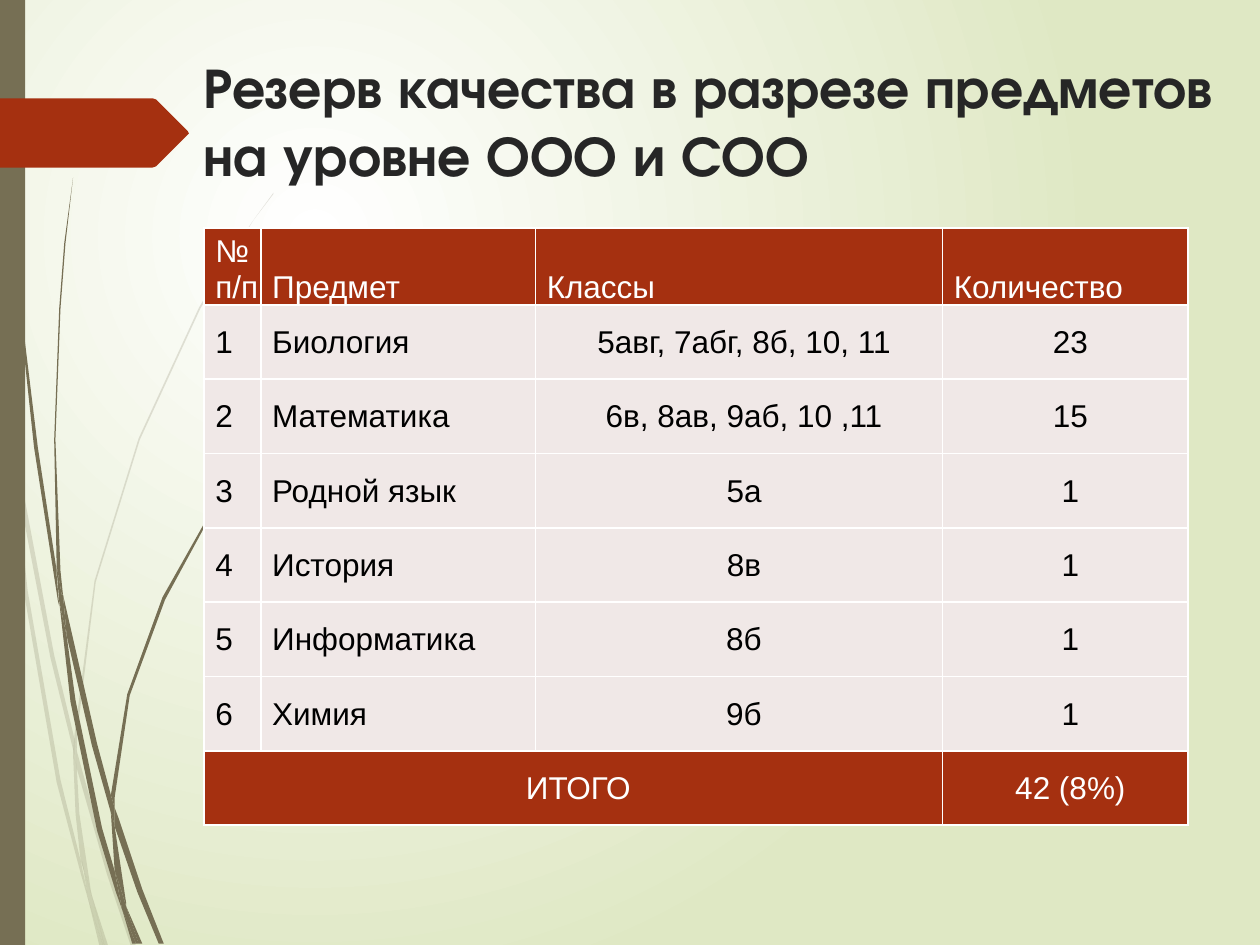
from lxml import etree
from pptx import Presentation
from pptx.dml.color import RGBColor
from pptx.enum.shapes import MSO_SHAPE
from pptx.enum.text import MSO_ANCHOR, PP_ALIGN
from pptx.oxml.ns import qn
from pptx.util import Pt

PX = 9144  # EMU in one px, 100 px to the inch
WHITE = RGBColor(0xFF, 0xFF, 0xFF)
BLACK = RGBColor(0x00, 0x00, 0x00)
INK = RGBColor(0x26, 0x26, 0x26)
OLIVE = RGBColor(0x76, 0x6F, 0x54)
RUST = RGBColor(0xA5, 0x30, 0x10)
ROSE = RGBColor(0xF0, 0xE8, 0xE7)
LIME = RGBColor(0xDF, 0xE8, 0xC4)

PALE = [
    [(8, 350), (6, 322), (0, 282), (0, 299), (7, 344)],
    [(40, 522), (59, 599), (59, 586), (43, 520), (10, 345), (12, 376)],
    [(64, 607), (61, 596), (61, 610), (85, 694), (104, 751), (108, 751), (88, 692)],
    [(83, 751), (86, 751), (73, 711)],
    [(64, 683), (48, 619), (22, 469), (12, 376), (8, 350), (19, 470), (45, 621),
     (64, 693), (70, 714), (69, 707)],
    [(58, 599), (60, 646), (64, 683), (67, 692), (73, 711), (72, 706), (63, 646),
     (61, 610), (61, 608)],
    [(61, 584), (76, 462), (111, 349), (159, 245), (187, 198), (201, 175), (217, 154),
     (217, 153), (201, 175), (186, 197), (158, 244), (110, 348), (75, 461), (59, 584),
     (59, 586), (61, 596)],
    [(70, 714), (79, 751), (82, 751)],
    [(61, 608), (61, 610), (61, 596), (59, 586), (58, 599)],
    [(67, 692), (65, 683), (69, 707), (70, 714), (82, 751), (83, 751), (73, 711)],
]
DARK = [
    [(5, 110), (14, 233), (27, 355), (46, 477), (47, 481), (45, 457), (45, 453),
     (30, 355), (15, 232), (6, 109), (4, 48), (3, 0), (2, 0), (3, 48)],
    [(73, 592), (88, 645), (88, 633), (88, 631), (77, 590), (50, 472), (53, 505)],
    [(94, 649), (91, 641), (91, 656), (109, 708), (126, 749), (130, 749), (113, 706)],
    [(91, 691), (81, 657), (60, 556), (53, 505), (47, 477), (56, 557), (77, 659),
     (92, 708), (97, 722), (96, 717)],
    [(50, 472), (48, 453), (44, 349), (48, 245), (52, 193), (58, 141), (51, 193),
     (47, 245), (43, 349), (45, 449), (49, 472)],
    [(110, 749), (113, 749), (100, 719)],
    [(47, 477), (53, 505), (50, 472), (49, 472), (45, 449), (45, 453)],
    [(91, 633), (103, 552), (131, 476), (169, 406), (191, 374), (203, 359), (216, 344),
     (215, 344), (203, 358), (191, 373), (168, 405), (129, 474), (101, 551), (88, 631),
     (91, 641)],
    [(97, 722), (105, 749), (108, 749)],
    [(88, 645), (91, 691), (96, 706), (100, 719), (100, 716), (91, 656), (90, 651)],
    [(88, 645), (90, 651), (91, 656), (91, 641), (88, 631), (88, 633)],
    [(96, 706), (91, 691), (96, 717), (97, 722), (108, 749), (110, 749), (100, 719)],
]
ARROW = [(149, 107), (124, 132), (121, 133), (0, 133), (0, 78), (121, 78), (124, 79),
         (149, 104), (150, 106)]

TITLE = "Резерв качества в разрезе предметов на уровне ООО и СОО"
ROWS = [
    ("№ п/п", "Предмет", "Классы", "Количество"),
    ("1", "Биология", "5авг, 7абг, 8б, 10, 11", "23"),
    ("2", "Математика", "6в, 8ав, 9аб, 10 ,11", "15"),
    ("3", "Родной язык", "5а", "1"),
    ("4", "История", "8в", "1"),
    ("5", "Информатика", "8б", "1"),
    ("6", "Химия", "9б", "1"),
    ("ИТОГО", "", "", "42 (8%)"),
]
COLS = (45, 218, 323, 195)
HEAD, STEP = 46, 59


class Deck:
    def __init__(self, wide, high):
        self.prs = Presentation()
        self.prs.slide_width, self.prs.slide_height = wide * PX, high * PX
        self.slide = self.prs.slides.add_slide(self.prs.slide_layouts[6])
        self.shapes = self.slide.shapes

    def glow(self, inner, outer):
        """Fill the background with a round gradient."""
        fill = self.slide.background.fill
        fill.gradient()
        for stop, color in zip(fill.gradient_stops, (inner, outer)):
            stop.color.rgb = color
        grad = next(self.slide.element.iter(qn("a:gradFill")))
        grad.remove(grad.find(qn("a:lin")))
        ring = etree.SubElement(grad, qn("a:path"), path="circle")
        etree.SubElement(ring, qn("a:fillToRect"), l="50000", t="50000",
                         r="100000", b="100000")

    def paint(self, shape, color, alpha=100):
        shape.shadow.inherit = False
        shape.fill.solid()
        shape.fill.fore_color.rgb = color
        shape.line.fill.background()
        if alpha < 100:
            tone = next(shape.element.spPr.iter(qn("a:srgbClr")))
            etree.SubElement(tone, qn("a:alpha"), val=str(alpha * 1000))

    def free(self, points, color, alpha=100, home=None):
        pen = (home or self.shapes).build_freeform(*points[0], scale=PX)
        pen.add_line_segments(points[1:], close=True)
        self.paint(pen.convert_to_shape(), color, alpha)

    def grass(self, blades, alpha=100):
        group = self.shapes.add_group_shape()
        for blade in blades:
            self.free(blade, OLIVE, alpha, group.shapes)

    def rect(self, x, y, w, h, color):
        box = (n * PX for n in (x, y, w, h))
        self.paint(self.shapes.add_shape(MSO_SHAPE.RECTANGLE, *box), color)

    def style(self, frame, name, size, color, bold=False):
        for run in frame.paragraphs[0].runs:
            run.font.name, run.font.size = name, Pt(size)
            run.font.color.rgb, run.font.bold = color, bold

    def title(self, x, y, w, h, text):
        frame = self.shapes.add_textbox(*(n * PX for n in (x, y, w, h))).text_frame
        frame.word_wrap = True
        frame.vertical_anchor = MSO_ANCHOR.TOP
        frame.text = text
        self.style(frame, "TeX Gyre Adventor", 32.4, INK, True)

    def edge(self, cell):
        """Draw a thin white border on all four sides."""
        props = cell._tc.get_or_add_tcPr()
        for spot, side in enumerate(("lnL", "lnR", "lnT", "lnB")):
            line = etree.Element(qn(f"a:{side}"), w=str(Pt(1)))
            fill = etree.SubElement(line, qn("a:solidFill"))
            etree.SubElement(fill, qn("a:srgbClr"), val=str(WHITE))
            props.insert(spot, line)

    def cell(self, cell, text, band, center, anchor):
        cell.fill.solid()
        cell.fill.fore_color.rgb = RUST if band else ROSE
        cell.margin_left, cell.margin_bottom = 9 * PX, 0
        cell.margin_right = cell.margin_top = PX
        cell.vertical_anchor = anchor
        cell.text_frame.text = text
        if center:
            cell.text_frame.paragraphs[0].alignment = PP_ALIGN.CENTER
        self.style(cell.text_frame, "Arial", 18, WHITE if band else BLACK)
        self.edge(cell)

    def table(self, x, y, rows, cols):
        last = len(rows) - 1
        high = HEAD + STEP * last
        grid = self.shapes.add_table(len(rows), len(cols), x * PX, y * PX,
                                     sum(cols) * PX, high * PX).table
        for col, wide in zip(grid.columns, cols):
            col.width = wide * PX
        for r, row in enumerate(rows):
            grid.rows[r].height = (STEP if r else HEAD) * PX
            anchor = MSO_ANCHOR.MIDDLE if r else MSO_ANCHOR.BOTTOM
            for c, text in enumerate(row):
                center = r == last or (r > 0 and c > 1)
                self.cell(grid.cell(r, c), text, r in (0, last), center, anchor)
        grid.cell(last, 0).merge(grid.cell(last, 2))


def main():
    deck = Deck(1000, 750)
    deck.glow(WHITE, LIME)
    deck.grass(PALE, 20)
    deck.grass(DARK)
    deck.rect(0, 0, 20, 750, OLIVE)
    deck.free(ARROW, RUST)
    deck.title(152, 36, 838, 140, TITLE)
    deck.table(162, 181, ROWS, COLS)
    deck.prs.save("out.pptx")


if __name__ == "__main__":
    main()
